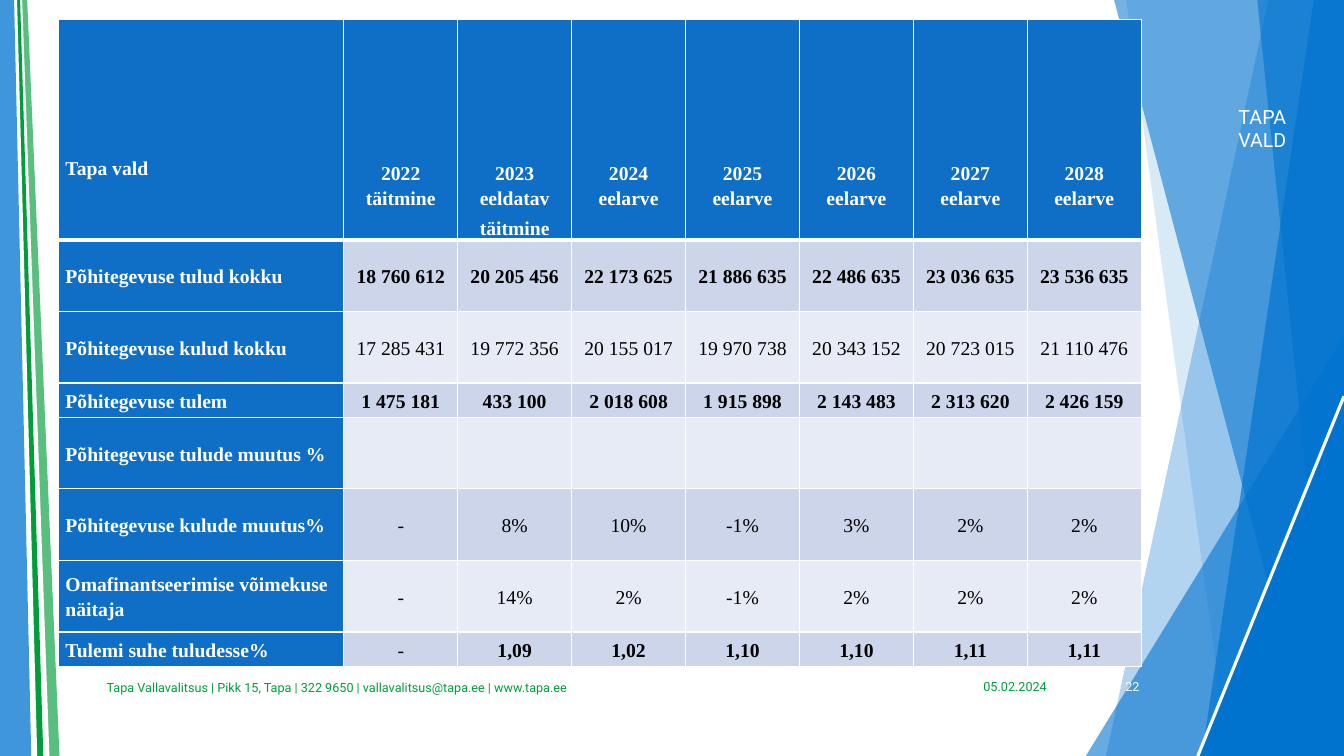
from lxml import etree
from pptx import Presentation
from pptx.dml.color import RGBColor
from pptx.enum import shapes, text
from pptx.oxml import ns
from pptx.util import Inches, Pt

COLORS = {"blue": "0073CF", "green": "009E3B", "white": "FFFFFF", "black": "000000",
          "header": "0F6FC6", "band": "CCD5EA", "pale": "E7EBF5"}
WIDTH, HEIGHT = 13.33, 7.5
PERIODS = [("2022 täitmine",), ("2023 eeldatav", "täitmine"), ("2024 eelarve",),
           ("2025 eelarve",), ("2026 eelarve",), ("2027 eelarve",), ("2028 eelarve",)]
REGION = "Tapa vald"
INDICATORS = [
    ("Põhitegevuse tulud kokku", 0.71, True,
     ["18 760 612", "20 205 456", "22 173 625", "21 886 635", "22 486 635", "23 036 635", "23 536 635"]),
    ("Põhitegevuse kulud kokku", 0.71, False,
     ["17 285 431", "19 772 356", "20 155 017", "19 970 738", "20 343 152", "20 723 015", "21 110 476"]),
    ("Põhitegevuse tulem", 0.34, True,
     ["1 475 181", "433 100", "2 018 608", "1 915 898", "2 143 483", "2 313 620", "2 426 159"]),
    ("Põhitegevuse tulude muutus %", 0.71, False, [""] * 7),
    ("Põhitegevuse kulude muutus%", 0.71, False, ["-", "8%", "10%", "-1%", "3%", "2%", "2%"]),
    ("Omafinantseerimise võimekuse näitaja", 0.71, False, ["-", "14%", "2%", "-1%", "2%", "2%", "2%"]),
    ("Tulemi suhe tuludesse%", 0.34, True, ["-", "1,09", "1,02", "1,10", "1,10", "1,11", "1,11"]),
]
HEADER_HEIGHT, LABEL_WIDTH, PERIOD_WIDTH = 2.19, 2.83, 1.13
HEADER_LINE = 0.3

RIGHT_FACETS = [
    ("polygon", [(12.58, 0), (WIDTH, 0), (WIDTH, HEIGHT), (10.97, HEIGHT)], 30),
    ("polygon", [(11.17, 0), (WIDTH, 0), (WIDTH, HEIGHT), (12.18, HEIGHT)], 15),
    ("triangle", (10.77, 3.33), 60),
    ("polygon", [(11.05, 0), (WIDTH, 0), (WIDTH, HEIGHT), (13.03, HEIGHT)], 55),
    ("polygon", [(13.03, 0), (WIDTH, 0), (WIDTH, HEIGHT), (11.92, HEIGHT)], 65),
    ("polygon", [(12.47, 0), (WIDTH, 0), (WIDTH, HEIGHT), (13.24, HEIGHT)], 60),
    ("triangle", (11.88, 3.93), 100),
]
LEFT_STRIPES = [(0.27, 0.59, "green", 65), (0.22, 0.49, "white", 100), (0.2, 0.43, "green", 100),
                (0.17, 0.37, "white", 100), (0.14, 0.31, "blue", 75)]
CAPTIONS = [
    ("TAPA VALD", (11.93, 1.1, 1.18, 0.34), 0.2, dict(size=14, color="white", align="CENTER")),
    ("05.02.2024", (9.48, 6.61, 1, 0.4), 0.1, dict(size=9, color="green", align="RIGHT")),
    ("Tapa Vallavalitsus | Pikk 15, Tapa | 322 9650 | vallavalitsus@tapa.ee | www.tapa.ee",
     (0.96, 6.62, 8.34, 0.4), 0.1, dict(size=9, color="green")),
    ("22", (10.65, 6.61, 0.75, 0.4), 0.1, dict(size=9, color="white", align="RIGHT")),
]


def write(frame, *lines, size=14, color="black", font="Roboto", align="LEFT",
          bold=False, italic=False, spacing=None, after=0):
    for index, line in enumerate(lines):
        paragraph = frame.add_paragraph() if index else frame.paragraphs[0]
        paragraph.alignment = getattr(text.PP_ALIGN, align)
        paragraph.line_spacing = spacing
        paragraph.space_after = Pt(after)
        run = paragraph.add_run()
        run.text = line
        run.font.size, run.font.name = Pt(size), font
        run.font.bold, run.font.italic = bold, italic
        run.font.color.rgb = RGBColor.from_string(COLORS[color])


def paint(shape, color, opacity):
    shape.shadow.inherit = False
    shape.line.fill.background()
    shape.fill.solid()
    shape.fill.fore_color.rgb = RGBColor.from_string(COLORS[color])
    if opacity < 100:
        tint = shape.fill._xPr.find(".//" + ns.qn("a:srgbClr"))
        etree.SubElement(tint, ns.qn("a:alpha"), val=str(opacity * 1000))


def add_polygon(slide, points, color, opacity):
    corners = [(Inches(x), Inches(y)) for x, y in points]
    builder = slide.shapes.build_freeform(*corners[0])
    builder.add_line_segments(corners[1:], close=True)
    paint(builder.convert_to_shape(), color, opacity)


def add_facet(slide, kind, place, opacity):
    if kind == "polygon":
        add_polygon(slide, place, "blue", opacity)
        return
    left, top = place
    triangle = slide.shapes.add_shape(shapes.MSO_SHAPE.ISOSCELES_TRIANGLE, Inches(left), Inches(top),
                                      Inches(WIDTH - left), Inches(HEIGHT - top))
    triangle.adjustments[0] = 1
    paint(triangle, "blue", opacity)


def add_edge(slide):
    edge = slide.shapes.add_connector(shapes.MSO_CONNECTOR.STRAIGHT, Inches(WIDTH), Inches(3.93),
                                      Inches(11.88), Inches(HEIGHT))
    edge.line.width = Pt(2.25)
    edge.line.color.rgb = RGBColor.from_string(COLORS["white"])
    etree.SubElement(edge._element.spPr, ns.qn("a:effectLst"))


def fill_cell(cell, lines, fill, top=1, bottom=1, anchor="MIDDLE", lift=0, **style):
    cell.margin_left = cell.margin_right = Inches(0.07)
    cell.margin_top, cell.margin_bottom = 0, Inches(lift)
    cell.vertical_anchor = getattr(text.MSO_ANCHOR, anchor)
    properties = cell._tc.get_or_add_tcPr()
    for side, width in (("L", 1), ("R", 1), ("T", top), ("B", bottom)):
        border = etree.SubElement(properties, ns.qn("a:ln" + side), w=str(Pt(width)))
        solid = etree.SubElement(border, ns.qn("a:solidFill"))
        etree.SubElement(solid, ns.qn("a:srgbClr"), val=COLORS["white"])
    cell.fill.solid()
    cell.fill.fore_color.rgb = RGBColor.from_string(COLORS[fill])
    if any(lines):
        write(cell.text_frame, *lines, font="Times New Roman", spacing=1.15, **style)


def add_budget(slide):
    widths = [LABEL_WIDTH] + [PERIOD_WIDTH] * len(PERIODS)
    heights = [HEADER_HEIGHT] + [height for _, height, _, _ in INDICATORS]
    budget = slide.shapes.add_table(len(heights), len(widths), Inches(0.58), Inches(0.19),
                                    Inches(sum(widths)), Inches(sum(heights))).table
    for column, width in zip(budget.columns, widths):
        column.width = Inches(width)
    for row, height in zip(budget.rows, heights):
        row.height = Inches(height)
    heading = dict(fill="header", color="white", bold=True)
    top_row = dict(heading, bottom=3, anchor="BOTTOM", after=4)
    fill_cell(budget.cell(0, 0), [REGION], lift=2 * HEADER_LINE, **top_row)
    for column, lines in enumerate(PERIODS, 1):
        fill_cell(budget.cell(0, column), lines, align="CENTER",
                  lift=HEADER_LINE * (2 - len(lines)), **top_row)
    for row, (label, _, bold, values) in enumerate(INDICATORS, 1):
        top = 3 if row == 1 else 1
        fill_cell(budget.cell(row, 0), [label], top=top, **heading)
        for column, value in enumerate(values, 1):
            dash = value == "-"
            fill_cell(budget.cell(row, column), [value], "band" if row % 2 else "pale", top=top,
                      align="CENTER", bold=bold and not dash, italic=dash)


def add_caption(slide, words, box, inset, style):
    frame = slide.shapes.add_textbox(*map(Inches, box)).text_frame
    frame.word_wrap = True
    frame.margin_left = frame.margin_right = Inches(inset)
    frame.vertical_anchor = text.MSO_ANCHOR.MIDDLE
    write(frame, words, **style)


def main():
    deck = Presentation()
    deck.slide_width, deck.slide_height = Inches(WIDTH), Inches(HEIGHT)
    slide = deck.slides.add_slide(deck.slide_layouts[6])
    for facet in RIGHT_FACETS:
        add_facet(slide, *facet)
    add_edge(slide)
    for upper, lower, color, opacity in LEFT_STRIPES:
        add_polygon(slide, [(0, HEIGHT), (0, 0), (upper, 0), (lower, HEIGHT)], color, opacity)
    add_budget(slide)
    for caption in CAPTIONS:
        add_caption(slide, *caption)
    deck.save("out.pptx")


if __name__ == "__main__":
    main()
